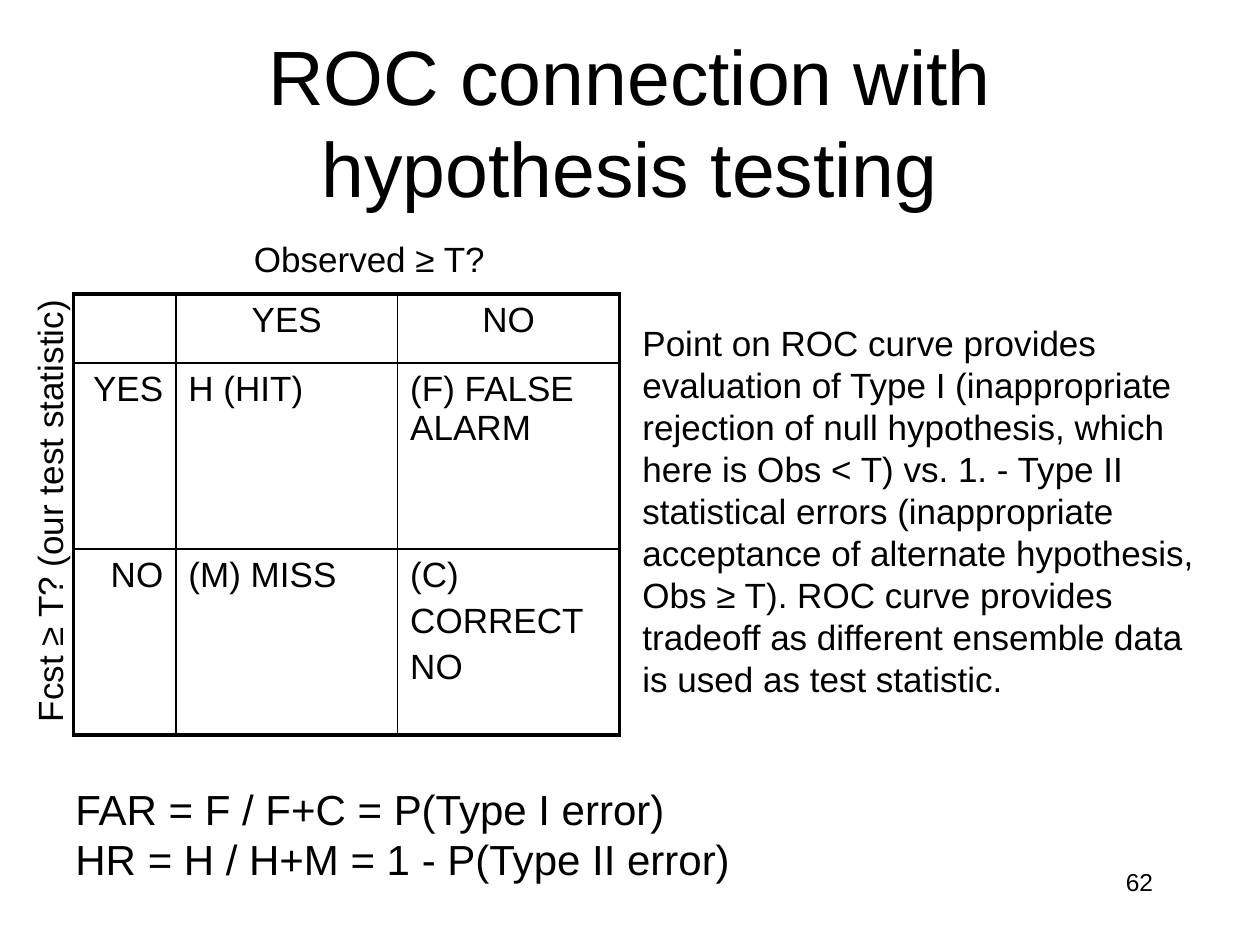
from dataclasses import dataclass

from lxml.etree import SubElement
from pptx import Presentation
from pptx.dml.color import RGBColor
from pptx.enum.text import MSO_ANCHOR, PP_ALIGN
from pptx.oxml.ns import qn
from pptx.util import Pt


@dataclass(frozen=True)
class Theme:
    font: str = "Arial"
    ink: str = "000000"
    title: int = 44
    formula: int = 24
    body: int = 20
    number: int = 14
    outer_line: float = 2.25
    inner_line: float = 1


THEME = Theme()
LEFT, CENTER, RIGHT = PP_ALIGN.LEFT, PP_ALIGN.CENTER, PP_ALIGN.RIGHT

TITLE = "ROC connection with hypothesis testing"
EXPLANATION = (
    "Point on ROC curve provides evaluation of Type I (inappropriate rejection of "
    "null hypothesis, which here is Obs < T) vs. 1. - Type II statistical errors "
    "(inappropriate acceptance of alternate hypothesis, Obs ≥ T). ROC curve provides "
    "tradeoff as different ensemble data is used as test statistic."
)
FORMULAS = "FAR = F / F+C = P(Type I error)\nHR = H / H+M = 1 - P(Type II error)"

TEXTS = [
    dict(text=TITLE, area=(54, 24, 612, 90), size=THEME.title,
         align=CENTER, anchor=MSO_ANCHOR.MIDDLE),
    dict(text="62", area=(516, 492, 150, 36), size=THEME.number, align=RIGHT),
    dict(text=EXPLANATION, area=(360, 180, 336, 225), size=THEME.body),
    dict(text="Observed ≥ T?", area=(138, 132, 147.5, 31.5), size=THEME.body, wrap=False),
    dict(text="Fcst ≥ T? (our test statistic)", area=(-100.8, 275, 258, 31.5),
         size=THEME.body, wrap=False, rotation=270),
    dict(text=FORMULAS, area=(36, 444, 392.5, 65.5), size=THEME.formula, wrap=False),
]

CONTINGENCY = [
    ["", "YES", "NO"],
    ["YES", "H (HIT)", "(F) FALSE ALARM"],
    ["NO", "(M) MISS", "(C)\nCORRECT\nNO"],
]
TABLE_CORNER = (42, 168)
COLUMN_WIDTHS = (58.5, 126.75, 126.75)
ROW_HEIGHTS = (39.5, 106.25, 106.25)
CELL_SPACE_BEFORE = 4


def write(frame, text, size, align, space_before=0):
    frame.text = text
    for para in frame.paragraphs:
        para.alignment = align
        para.space_before = Pt(space_before)
        para.font.size = Pt(size)
        for span in para.runs:
            span.font.name = THEME.font
            span.font.size = Pt(size)
            span.font.color.rgb = RGBColor.from_string(THEME.ink)


def add_text(page, text, area, size, align=LEFT, anchor=MSO_ANCHOR.TOP, wrap=True, rotation=0):
    box = page.shapes.add_textbox(*map(Pt, area))
    box.rotation = rotation
    box.text_frame.word_wrap = wrap
    box.text_frame.vertical_anchor = anchor
    write(box.text_frame, text, size, align)


def set_borders(cell, outer_sides):
    properties = cell._tc.get_or_add_tcPr()
    for side, is_outer in outer_sides.items():
        width = THEME.outer_line if is_outer else THEME.inner_line
        line = SubElement(properties, qn(f"a:ln{side}"), w=str(Pt(width)))
        fill = SubElement(line, qn("a:solidFill"))
        SubElement(fill, qn("a:srgbClr"), val=THEME.ink)


def add_contingency_table(page):
    size = (sum(COLUMN_WIDTHS), sum(ROW_HEIGHTS))
    last_row, last_column = len(ROW_HEIGHTS) - 1, len(COLUMN_WIDTHS) - 1
    table = page.shapes.add_table(
        len(ROW_HEIGHTS), len(COLUMN_WIDTHS), *map(Pt, TABLE_CORNER + size)).table
    table.first_row = table.horz_banding = False
    for column, width in zip(table.columns, COLUMN_WIDTHS):
        column.width = Pt(width)
    for row, height in zip(table.rows, ROW_HEIGHTS):
        row.height = Pt(height)
    for r, labels in enumerate(CONTINGENCY):
        for c, label in enumerate(labels):
            cell = table.cell(r, c)
            align = CENTER if r == 0 else RIGHT if c == 0 else LEFT
            write(cell.text_frame, label, THEME.body, align, CELL_SPACE_BEFORE)
            set_borders(cell, {"L": c == 0, "R": c == last_column,
                               "T": r == 0, "B": r == last_row})
            cell.fill.background()


def main():
    deck = Presentation()
    deck.slide_width, deck.slide_height = Pt(720), Pt(540)
    page = deck.slides.add_slide(deck.slide_layouts[6])
    for item in TEXTS:
        add_text(page, **item)
    add_contingency_table(page)
    deck.save("out.pptx")


if __name__ == "__main__":
    main()
